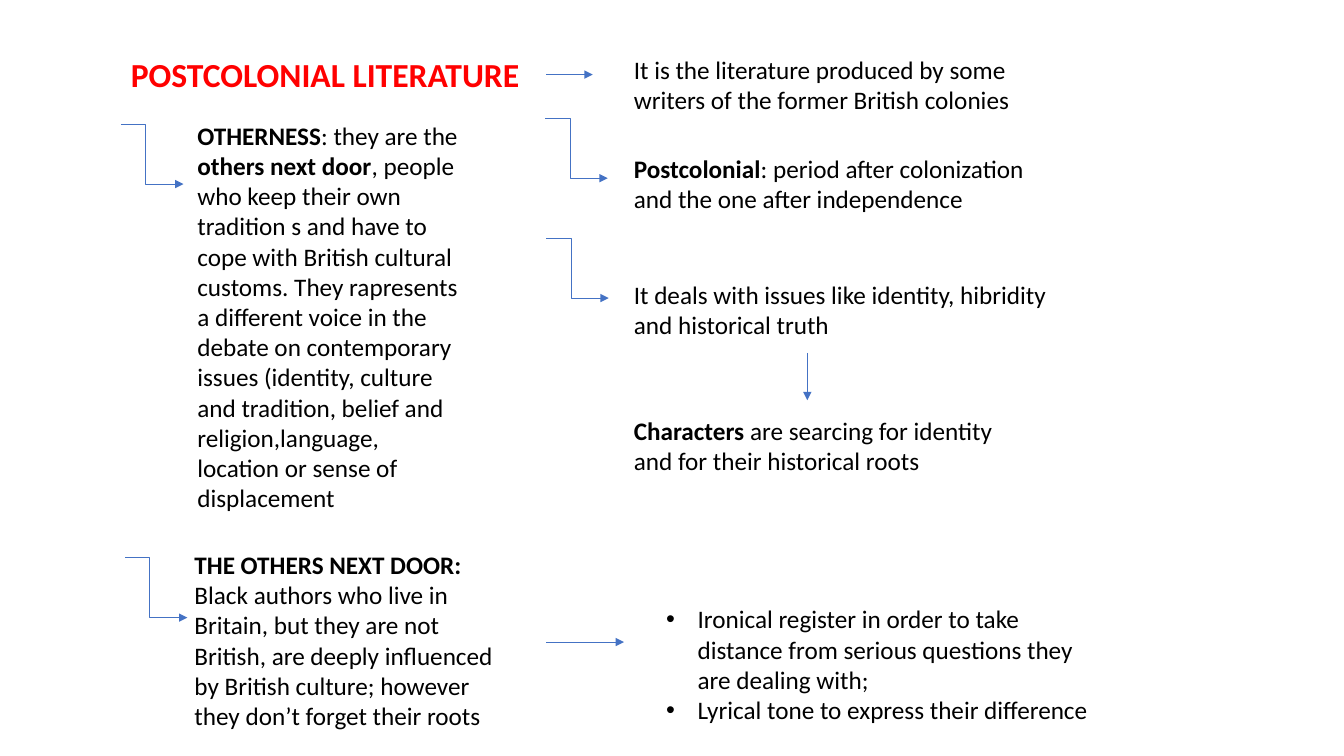
from lxml import etree
from pptx import Presentation
from pptx.dml.color import RGBColor
from pptx.enum.shapes import MSO_CONNECTOR as Connector
from pptx.enum.text import MSO_AUTO_SIZE as AutoSize
from pptx.oxml.ns import qn
from pptx.util import Pt

COLORS = {"title": "FF0000", "body": "000000", "arrow": "4472C4"}
FONT = "Calibri"
BODY_SIZE = 18
RIGHT_COLUMN = 445.7
ELBOW_WIDTH, ELBOW_HEIGHT = 44.6, 43
ELBOW_BEND = 39500  # thousandths of a percent of the width
BULLET_INDENT = 22.5


def write_text(paragraph, text, size=BODY_SIZE, color="body", bullet=False):
    """Fill a paragraph; parts between ** marks are bold."""
    for index, part in enumerate(text.split("**")):
        if not part:
            continue
        run = paragraph.add_run()
        run.text = part
        run.font.name = FONT
        run.font.size = Pt(size)
        run.font.bold = index % 2 == 1
        run.font.color.rgb = RGBColor.from_string(COLORS[color])
    if bullet:
        properties = paragraph._p.get_or_add_pPr()
        properties.set("marL", str(Pt(BULLET_INDENT)))
        properties.set("indent", str(-Pt(BULLET_INDENT)))
        etree.SubElement(properties, qn("a:buFont"), typeface="Arial")
        etree.SubElement(properties, qn("a:buChar"), char="•")


class ConceptMap:
    def __init__(self, slide):
        self.shapes = slide.shapes

    def note(self, left, top, width, height, *paragraphs, **text_format):
        box = self.shapes.add_textbox(Pt(left), Pt(top), Pt(width), Pt(height))
        frame = box.text_frame
        frame.word_wrap = True
        frame.auto_size = AutoSize.SHAPE_TO_FIT_TEXT
        for index, text in enumerate(paragraphs):
            paragraph = frame.add_paragraph() if index else frame.paragraphs[0]
            write_text(paragraph, text, **text_format)

    def arrow(self, left, top, right, bottom, kind=Connector.STRAIGHT):
        arrow = self.shapes.add_connector(
            kind, Pt(left), Pt(top), Pt(right), Pt(bottom))
        arrow.line.width = Pt(0.5)
        arrow.line.color.rgb = RGBColor.from_string(COLORS["arrow"])
        etree.SubElement(arrow.line._get_or_add_ln(), qn("a:tailEnd"),
                         type="triangle")
        etree.SubElement(arrow._element.spPr, qn("a:effectLst"))
        return arrow

    def elbow(self, left, top):
        elbow = self.arrow(left, top, left + ELBOW_WIDTH, top + ELBOW_HEIGHT,
                           Connector.ELBOW)
        geometry = elbow._element.spPr.find(qn("a:prstGeom"))
        adjustments = geometry.find(qn("a:avLst"))
        if adjustments is None:
            adjustments = etree.SubElement(geometry, qn("a:avLst"))
        etree.SubElement(adjustments, qn("a:gd"), name="adj1",
                         fmla=f"val {ELBOW_BEND}")


def main():
    deck = Presentation()
    deck.slide_width, deck.slide_height = Pt(960), Pt(540)
    concept_map = ConceptMap(deck.slides.add_slide(deck.slide_layouts[6]))

    concept_map.note(86.4, 35.3, 302.4, 36, "**POSTCOLONIAL LITERATURE**",
                     size=24, color="title")

    definitions = [
        (35.3, 295.2, ["It is the literature produced by some writers of the "
                       "former British colonies"]),
        (105.8, 299.5, ["**Postcolonial**: period after colonization",
                        "and the one after independence"]),
        (195.8, 337, ["It deals with issues like identity, hibridity and "
                      "historical truth"]),
        (293, 299.5, ["**Characters** are searcing for identity and for their "
                      "historical roots"]),
    ]
    for top, width, paragraphs in definitions:
        concept_map.note(RIGHT_COLUMN, top, width, 51.1, *paragraphs)

    concept_map.note(
        133.9, 82.1, 203.8, 290.9,
        "**OTHERNESS**: they are the **others next door**, people who keep "
        "their own tradition s and have to cope with British cultural customs. "
        "They rapresents a different voice in the debate on contemporary "
        "issues (identity, culture and tradition, belief and "
        "religion,language, location or sense of displacement")
    concept_map.note(
        131.8, 388.8, 229, 138.2,
        "**THE OTHERS NEXT DOOR:**",
        "Black authors who live in Britain, but they are not British, are "
        "deeply influenced by British culture; however they don’t forget "
        "their roots")
    concept_map.note(
        468.7, 427.7, 317.5, 94.3,
        "Ironical register in order to take distance from serious questions "
        "they are dealing with;",
        "Lyrical tone to express their difference", bullet=True)

    for ends in [(390.2, 53.3, 423.4, 53.3), (576.7, 252, 576.7, 285.9),
                 (390.2, 458.6, 445.7, 458.6)]:
        concept_map.arrow(*ends)
    for start in [(389.5, 84.3), (390.2, 169.9), (86.4, 88.5), (89.3, 398.2)]:
        concept_map.elbow(*start)

    deck.save("out.pptx")


if __name__ == "__main__":
    main()
